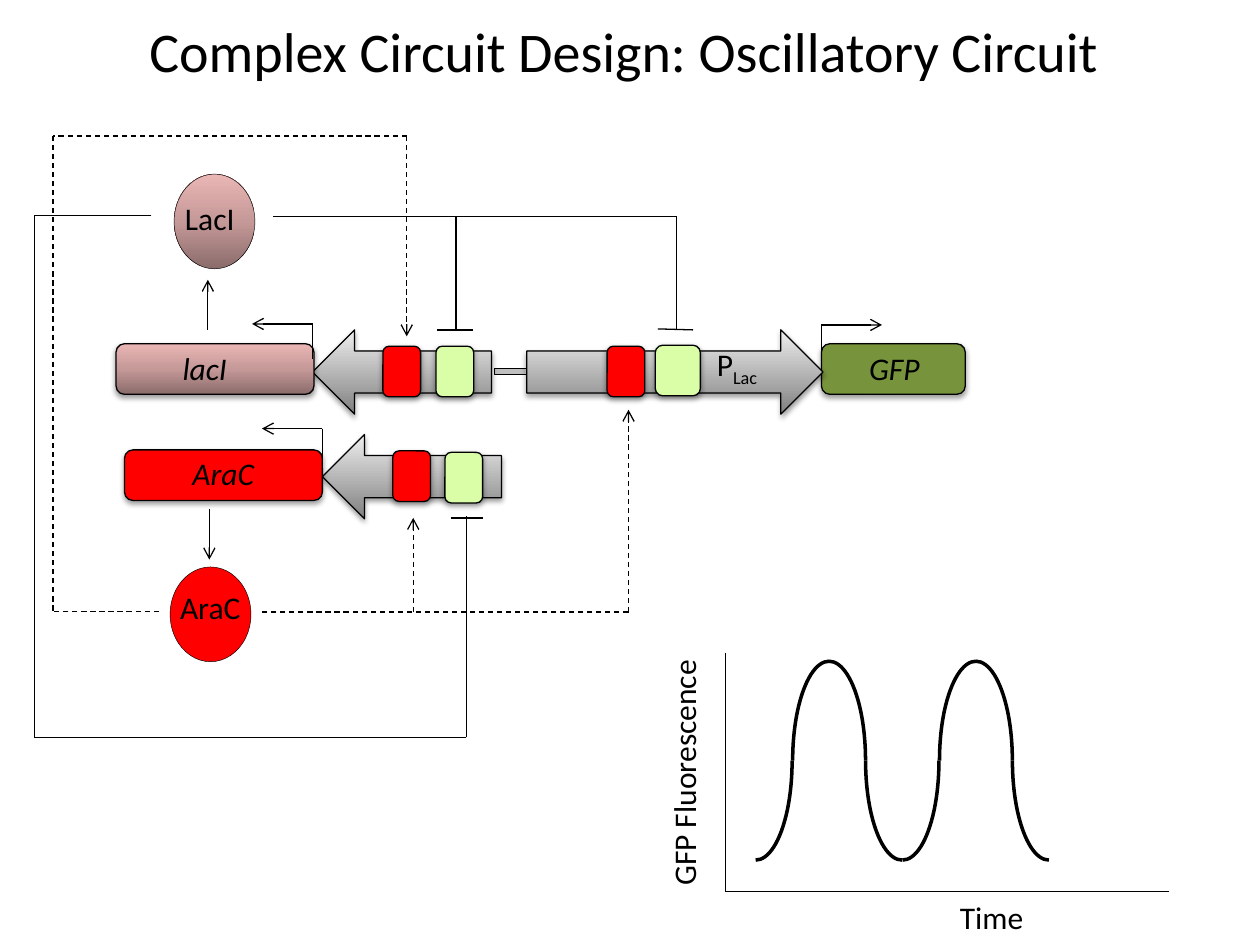
"""Build a slide showing an oscillatory gene circuit and its GFP output."""
from copy import deepcopy
from lxml.etree import SubElement
from pptx import Presentation
from pptx.dml.color import RGBColor
from pptx.enum.dml import MSO_LINE
from pptx.enum.shapes import MSO_CONNECTOR, MSO_SHAPE
from pptx.enum.text import MSO_AUTO_SIZE, PP_ALIGN
from pptx.oxml.ns import qn
from pptx.util import Cm, Pt

BLACK = RGBColor(0x00, 0x00, 0x00)
RED = RGBColor(0xFF, 0x00, 0x00)
LIME = RGBColor(0xDA, 0xFD, 0xA7)
GREEN = RGBColor(0x77, 0x93, 0x3C)
SILVER = RGBColor(0xBF, 0xBF, 0xBF)
GREY = (RGBColor(0x80, 0x80, 0x80), RGBColor(0xEE, 0xEE, 0xEE))
PINK = (RGBColor(0x8A, 0x6C, 0x6B), RGBColor(0xC5, 0x99, 0x98), RGBColor(0xE9, 0xB6, 0xB4))

deck = Presentation()
deck.slide_width, deck.slide_height = Cm(25.4), Cm(19.05)
slide = deck.slides.add_slide(deck.slide_layouts[6])
shapes = slide.shapes


def write(words, left, top, width, height=1.02, size=18, italic=False, sub="",
          turn=0, wrap=False, align=PP_ALIGN.LEFT):
    box = shapes.add_textbox(Cm(left), Cm(top), Cm(width), Cm(height))
    box.rotation = turn
    frame = box.text_frame
    frame.word_wrap = wrap
    frame.auto_size = MSO_AUTO_SIZE.SHAPE_TO_FIT_TEXT
    para = frame.paragraphs[0]
    para.alignment = align
    for part, base in ((words, None), (sub, "-25000")):
        if part:
            run = para.add_run()
            run.text = part
            font = run.font
            font.name, font.size, font.italic = "Calibri", Pt(size), italic
            font.color.rgb = BLACK
            if base:
                font._element.set("baseline", base)


def link(x1, y1, x2, y2, arrow=False, dash=False, width=0.75):
    wire = shapes.add_connector(MSO_CONNECTOR.STRAIGHT, Cm(x1), Cm(y1), Cm(x2), Cm(y2))
    wire.line.color.rgb = BLACK
    wire.line.width = Pt(width)
    if dash:
        wire.line.dash_style = MSO_LINE.DASH
    if arrow:
        SubElement(wire.line._get_or_add_ln(), qn("a:tailEnd"), type="arrow")
    SubElement(wire._element.spPr, qn("a:effectLst"))


ARROW, ROUND = MSO_SHAPE.RIGHT_ARROW, MSO_SHAPE.ROUNDED_RECTANGLE
OVAL, RECT = MSO_SHAPE.OVAL, MSO_SHAPE.RECTANGLE
parts = [
    (RECT, 9.96, 7.42, 0.64, 0.13, SILVER, False),
    (ARROW, 6.3, 6.65, 3.61, 1.7, GREY, True),
    (ROUND, 2.34, 6.93, 3.99, 1.02, PINK, False),
    (ROUND, 16.56, 6.93, 2.9, 1.02, GREEN, False),
    (OVAL, 3.51, 3.51, 1.63, 1.91, PINK, False),
    (ARROW, 10.62, 6.65, 5.97, 1.7, GREY, False),
    (ROUND, 13.21, 6.96, 0.91, 1.02, LIME, False),
    (ROUND, 7.72, 6.98, 0.76, 1.02, RED, False),
    (ROUND, 8.79, 6.98, 0.76, 1.02, LIME, False),
    (ROUND, 12.24, 6.98, 0.76, 1.02, RED, False),
    (ARROW, 6.5, 8.76, 3.61, 1.7, GREY, True),
    (ROUND, 2.51, 9.07, 3.99, 1.02, RED, False),
    (ROUND, 7.92, 9.09, 0.76, 1.02, RED, False),
    (ROUND, 8.97, 9.12, 0.76, 1.02, LIME, False),
    (OVAL, 3.43, 11.43, 1.63, 1.91, RED, False),
]
for kind, left, top, width, height, paint, flip in parts:
    part = shapes.add_shape(kind, Cm(left), Cm(top), Cm(width), Cm(height))
    part.shadow.inherit = False
    props = part._element.spPr
    if flip:
        props.xfrm.set("flipH", "1")
    fill = part.fill
    if paint in (GREY, PINK):
        fill.gradient()
        fill.gradient_angle = 90
        stops = props.find(".//" + qn("a:gsLst"))
        while len(stops) < len(paint):
            stops.append(deepcopy(stops[0]))
        for i, stop in enumerate(fill.gradient_stops):
            stop.position = i / (len(paint) - 1)
            stop.color.rgb = paint[i]
    else:
        fill.solid()
        fill.fore_color.rgb = paint
    raised = kind in (ARROW, ROUND)
    part.line.color.rgb = BLACK
    part.line.width = Pt(0.75 if raised else 0.25)
    if raised:
        shade = SubElement(props.find(qn("a:effectLst")), qn("a:outerShdw"), blurRad="40000",
                           dist="20000", dir="5400000", rotWithShape="0")
        tint = SubElement(shade, qn("a:srgbClr"), val="000000")
        SubElement(tint, qn("a:alpha"), val="38000")

for x, y, end in ((6.3, 6.53, 5.08), (16.56, 6.55, 17.78), (6.5, 8.64, 5.28)):
    link(x, y, end, y, arrow=True)
    link(x, y, x, y + 0.71)

for ends in ((4.19, 6.65, 4.19, 5.64), (4.22, 10.26, 4.22, 11.28)):
    link(*ends, arrow=True)

for ends in (
    (13.64, 4.37, 13.64, 6.65), (13.64, 4.37, 5.51, 4.37), (13.97, 6.65, 13.26, 6.63),
    (9.19, 4.37, 9.19, 6.65), (9.53, 6.65, 8.81, 6.65),
    (9.4, 14.86, 9.4, 10.41), (9.4, 14.86, 0.69, 14.86), (9.73, 10.44, 9.09, 10.44),
    (0.69, 14.86, 0.69, 4.34), (3.05, 4.34, 0.69, 4.34),
):
    link(*ends)

for *ends, arrow in (
    (12.67, 12.34, 12.67, 8.26, True), (12.67, 12.34, 5.28, 12.34, False),
    (8.33, 12.34, 8.33, 10.44, True), (8.2, 2.74, 8.2, 6.78, True),
    (8.2, 2.74, 1.07, 2.74, False), (1.07, 2.74, 1.07, 12.32, False),
    (3.2, 12.32, 1.07, 12.32, False),
):
    link(*ends, arrow=arrow, dash=True)

for ends in ((14.61, 13.16, 14.61, 17.96), (23.57, 17.96, 14.61, 17.96)):
    link(*ends, width=0.25)

for start in (14.5, 17.46):
    for shift, flips in ((0, "V"), (1.48, "H"), (1.48, ""), (2.95, "HV")):
        curve = shapes.add_shape(MSO_SHAPE.ARC, Cm(start + shift), Cm(13.33), Cm(1.47), Cm(4.01))
        curve.shadow.inherit = False
        curve.fill.background()
        curve.line.color.rgb = BLACK
        curve.line.width = Pt(2)
        for axis in flips:
            curve._element.spPr.xfrm.set("flip" + axis, "1")

write("Complex Circuit Design: Oscillatory Circuit", 0.2, 0.2, 24.77, 1.63,
      size=32, wrap=True, align=PP_ALIGN.CENTER)
write("GFP", 17.27, 6.91, 1.7, italic=True)
write("lacI", 3.43, 6.91, 1.57, italic=True)
write("AraC", 3.63, 9.02, 1.93, italic=True)
write("LacI", 3.48, 3.89, 1.52)
write("AraC", 3.38, 11.73, 1.75)
write("P", 14.2, 6.83, 1.4, sub="Lac")
write("GFP Fluorescence", 11.23, 15.04, 5.11, turn=270)
write("Time", 19.1, 17.98, 1.8)

deck.save("out.pptx")
